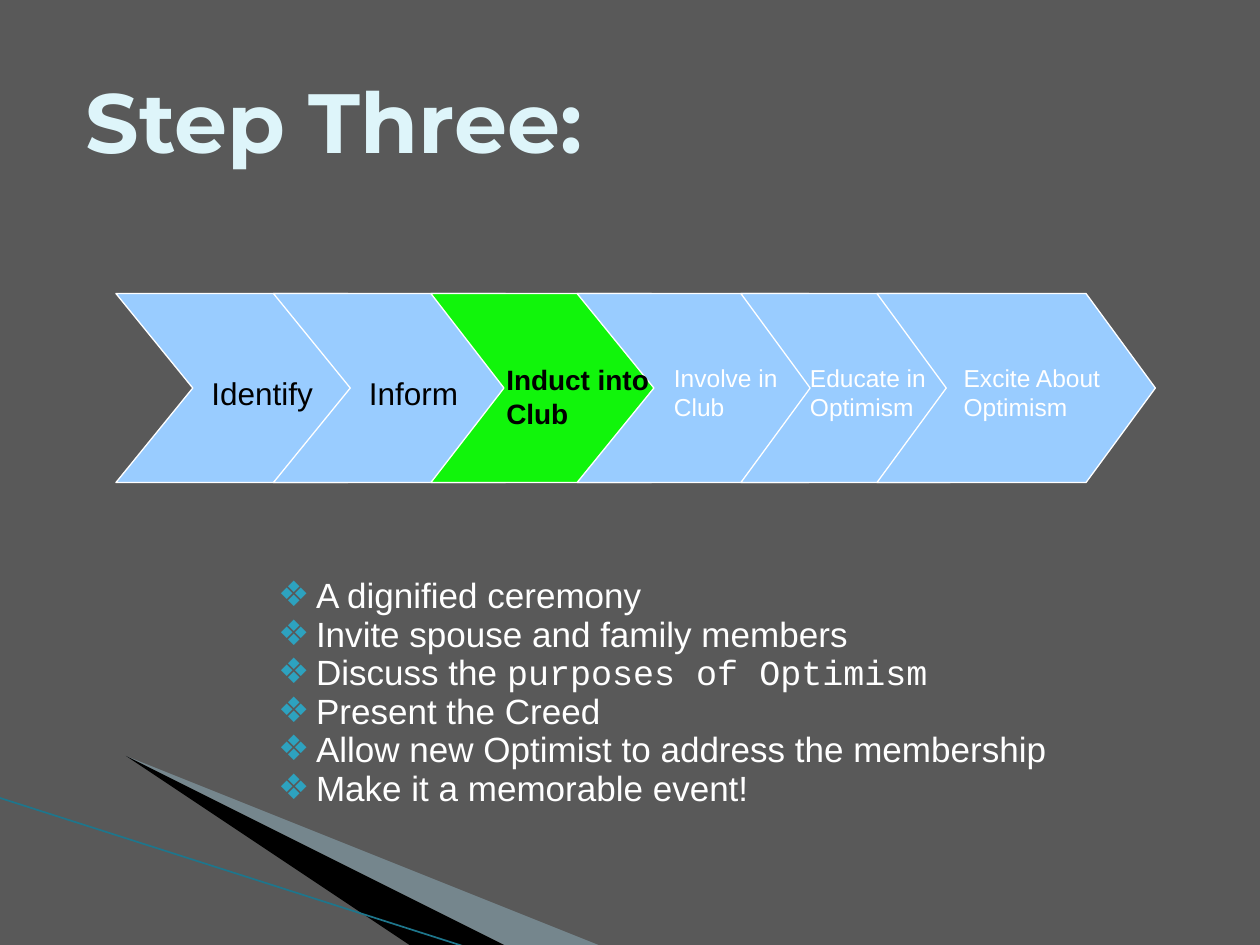
from lxml.etree import SubElement
from pptx import Presentation
from pptx.dml.color import RGBColor
from pptx.enum.shapes import MSO_CONNECTOR, MSO_SHAPE
from pptx.enum.text import MSO_ANCHOR
from pptx.oxml.ns import qn
from pptx.util import Inches, Pt

WHITE, BLACK = "FFFFFF", "000000"
SKY, GREEN = "99CCFF", "11F50B"
CHEVRON_TOP, CHEVRON_HEIGHT, CHEVRON_POINT = 2.33, 1.5, 0.61

CHEVRONS = [
    (0.92, 2.45, SKY),
    (2.17, 2.45, SKY),
    (3.42, 2.33, GREEN),
    (4.58, 2.45, SKY),
    (5.88, 2.21, SKY),
    (6.96, 2.21, SKY),
]

DONE = {"size": 18, "color": BLACK}
CURRENT = {"size": 16, "color": BLACK, "bold": True}
AHEAD = {"size": 14, "color": WHITE}
LABELS = [
    ("Identify", (1.58, 2.92, 1.35, 0.4), DONE),
    ("Inform", (2.83, 2.92, 1.08, 0.4), DONE),
    ("Induct into Club", (3.92, 2.83, 1.35, 0.64), CURRENT),
    ("Involve in Club", (5.25, 2.83, 1.45, 0.57), AHEAD),
    ("Educate in Optimism", (6.33, 2.83, 1.64, 0.57), AHEAD),
    ("Excite About Optimism", (7.55, 2.83, 1.53, 0.57), AHEAD),
]

CEREMONY = [
    [("A dignified ceremony", "Arial")],
    [("Invite spouse and family members", "Arial")],
    [("Discuss the ", "Arial"), ("purposes of Optimism", "Courier New")],
    [("Present the Creed", "Arial")],
    [("Allow new Optimist to address the membership", "Arial")],
    [("Make it a memorable event!", "Arial")],
]


def rgb(code):
    """Turn a hex string into a colour."""
    return RGBColor.from_string(code)


def paint(shape, fill, line=None):
    """Give a shape a solid fill and an optional thin outline."""
    shape.shadow.inherit = False
    shape.fill.solid()
    shape.fill.fore_color.rgb = rgb(fill)
    if line:
        shape.line.color.rgb = rgb(line)
        shape.line.width = Pt(0.75)
    else:
        shape.line.fill.background()


def add_wedge(page, points, fill, opacity=100):
    """Draw a closed polygon, see-through when opacity is below 100."""
    builder = page.shapes.build_freeform(*points[0], scale=Inches(1))
    builder.add_line_segments(points[1:], close=True)
    wedge = builder.convert_to_shape()
    paint(wedge, fill)
    if opacity < 100:
        color = wedge.fill._xPr.find(qn("a:solidFill"))[0]
        SubElement(color, qn("a:alpha"), val=str(opacity * 1000))


def add_edge(page, start, end, color, width):
    """Draw a straight line without a shadow."""
    ends = [Inches(value) for value in (*start, *end)]
    edge = page.shapes.add_connector(MSO_CONNECTOR.STRAIGHT, *ends)
    edge.line.color.rgb = rgb(color)
    edge.line.width = Pt(width)
    SubElement(edge._element.spPr, qn("a:effectLst"))


def add_chevron(page, left, width, fill):
    """Draw one step of the process band."""
    chevron = page.shapes.add_shape(
        MSO_SHAPE.CHEVRON, Inches(left), Inches(CHEVRON_TOP),
        Inches(width), Inches(CHEVRON_HEIGHT))
    chevron.adjustments[0] = CHEVRON_POINT / CHEVRON_HEIGHT * width / 2.45
    paint(chevron, fill, WHITE)


def add_box(page, place):
    """Add an empty wrapping text box and return its text frame."""
    box = page.shapes.add_textbox(*[Inches(value) for value in place])
    box.text_frame.word_wrap = True
    return box.text_frame


def add_span(para, text, size, color, name="Arial", bold=False):
    """Add a formatted run to a paragraph."""
    span = para.add_run()
    span.text = text
    span.font.color.rgb = rgb(color)
    for key, value in {"size": Pt(size), "name": name, "bold": bold}.items():
        setattr(span.font, key, value)


def add_bullet(para, mark, color, margin, hang):
    """Give a paragraph a coloured hanging bullet."""
    properties = para._p.get_or_add_pPr()
    properties.set("marL", str(Inches(margin)))
    properties.set("indent", str(-Inches(hang)))
    bullet_color = SubElement(properties, qn("a:buClr"))
    SubElement(bullet_color, qn("a:srgbClr"), val=color)
    SubElement(properties, qn("a:buFont"), typeface="Arial")
    SubElement(properties, qn("a:buChar"), char=mark)


def add_list(page, items):
    """Write the bulleted list of ceremony points."""
    frame = add_box(page, (1.33, 4.17, 8.25, 3.25))
    frame.margin_top = Inches(0.41)
    for index, item in enumerate(items):
        para = frame.add_paragraph() if index else frame.paragraphs[0]
        add_bullet(para, "❖", "2DA2BF", margin=1.08, hang=0.3)
        para.line_spacing = Pt(22)
        for text, name in item:
            add_span(para, text, 20, WHITE, name)


def main():
    """Build and save the slide."""
    deck = Presentation()
    deck.slide_width, deck.slide_height = Inches(10), Inches(7.5)
    page = deck.slides.add_slide(deck.slide_layouts[6])
    page.background.fill.solid()
    page.background.fill.fore_color.rgb = rgb("595959")

    add_wedge(page, [(0.55, 6.5), (5.95, 7.51), (4.56, 7.51)], "A0CBDC", 40)
    add_wedge(page, [(0.53, 6.49), (4.57, 7.51), (3.72, 7.52)], BLACK)
    add_edge(page, (-0.01, 6.33), (3.71, 7.52), "1E768C", 0.95)

    title = add_box(page, (0.58, 0.33, 9.25, 1.25))
    title.vertical_anchor = MSO_ANCHOR.MIDDLE
    add_span(title.paragraphs[0], "Step Three:", 48, "DEF5FA", "Montserrat", True)

    for left, width, fill in CHEVRONS:
        add_chevron(page, left, width, fill)
    for text, place, style in LABELS:
        add_span(add_box(page, place).paragraphs[0], text, **style)
    add_list(page, CEREMONY)
    deck.save("out.pptx")


if __name__ == "__main__":
    main()
